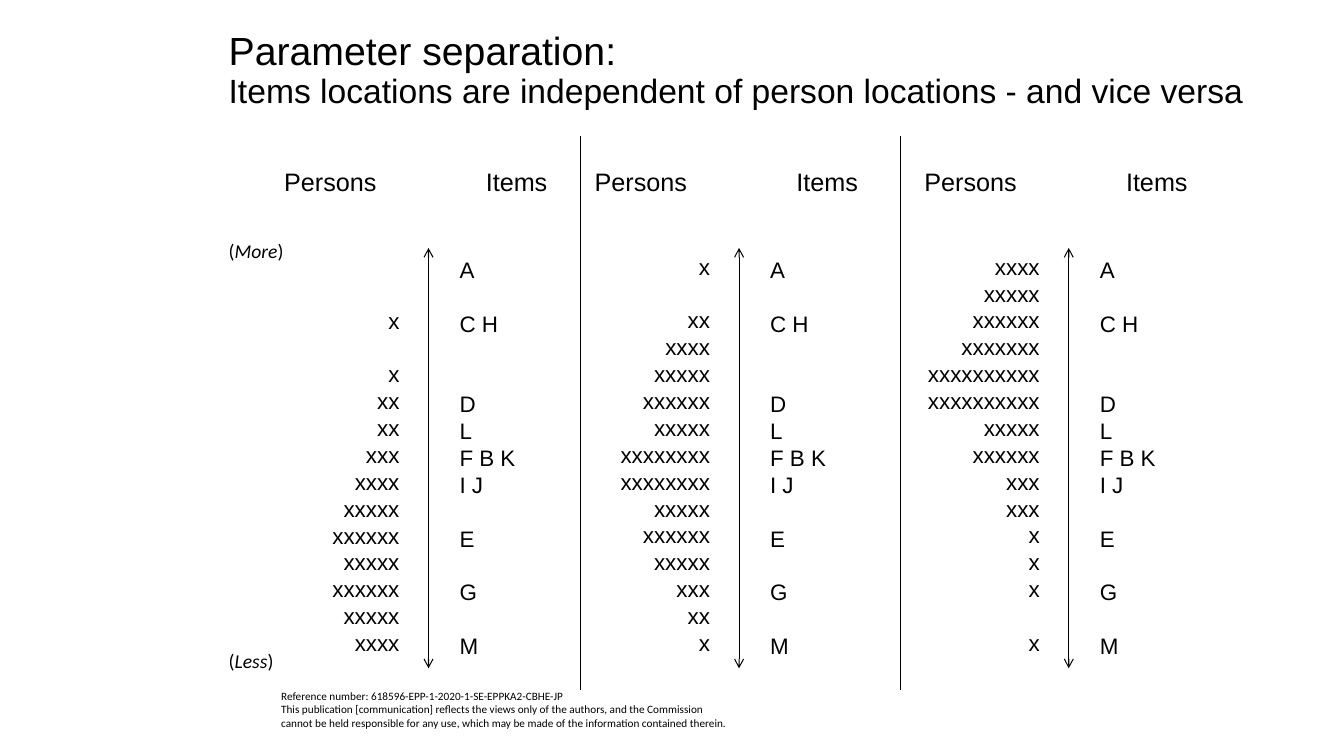
from lxml import etree
from pptx import Presentation
from pptx.dml.color import RGBColor
from pptx.enum.shapes import MSO_CONNECTOR
from pptx.enum.text import MSO_ANCHOR, PP_ALIGN
from pptx.oxml.ns import qn
from pptx.util import Inches, Pt

STRAIGHT = MSO_CONNECTOR.STRAIGHT
LEFT, RIGHT = PP_ALIGN.LEFT, PP_ALIGN.RIGHT
TOP, MIDDLE = MSO_ANCHOR.TOP, MSO_ANCHOR.MIDDLE
BLACK = "000000"
ROW_PT = 19.2
TOP_Y = 2.46

ITEMS = ["A", "", "C H", "", "", "D", "L", "F B K", "I J", "", "E", "", "G", "", "M"]
SCALES = [
    (4.25, [0, 0, 1, 0, 1, 2, 2, 3, 4, 5, 6, 5, 6, 5, 4]),
    (7.33, [1, 0, 2, 4, 5, 6, 5, 8, 8, 5, 6, 5, 3, 2, 1]),
    (10.6, [4, 5, 6, 7, 10, 10, 5, 6, 3, 3, 1, 1, 1, 0, 1]),
]


def color(value):
    return RGBColor.from_string(value)


class SlideBuilder:
    def __init__(self, slide):
        self.slide = slide
        self.font = {"name": "Arial", "size": Pt(16), "italic": False}

    def text_frame(self, x, y, w, h, anchor=TOP):
        sp = self.slide.shapes.add_textbox(Inches(x), Inches(y), Inches(w), Inches(h))
        tf = sp.text_frame
        tf.word_wrap = True
        tf.vertical_anchor = anchor
        return tf

    def run(self, p, text, **style):
        r = p.add_run()
        r.text = text
        for key, value in {**self.font, **style}.items():
            setattr(r.font, key, value)
        r.font.color.rgb = color(BLACK)

    def lines(self, x, y, w, h, runs, anchor=TOP, spacing=1.0):
        p = self.text_frame(x, y, w, h, anchor).paragraphs[0]
        p.line_spacing = spacing
        for i, (text, style) in enumerate(runs):
            if i:
                p.add_line_break()
            self.run(p, text, **style)

    def label(self, x, y, word):
        p = self.text_frame(x, y, 0.9, 0.34).paragraphs[0]
        for text, italic in (("(", False), (word, True), (")", False)):
            self.run(p, text, name="Calibri", size=Pt(14), italic=italic)

    def heading(self, x, y):
        p = self.text_frame(x, y, 2.84, 0.4).paragraphs[0]
        tabs = etree.SubElement(p._p.get_or_add_pPr(), qn("a:tabLst"))
        etree.SubElement(tabs, qn("a:tab"), pos=str(Inches(2)), algn="l")
        self.run(p, "Persons\tItems", size=Pt(18))

    def column(self, x, y, w, rows, align):
        filled = [i for i, text in enumerate(rows) if text]
        first = filled[0]
        pitch = ROW_PT / 72
        tf = self.text_frame(x, y + first * pitch, w, (len(rows) - first) * pitch + 0.1)
        previous = first - 1
        for i in filled:
            p = tf.paragraphs[0] if i == first else tf.add_paragraph()
            p.alignment = align
            p.line_spacing = Pt(ROW_PT)
            p.space_before = Pt(ROW_PT * (i - previous - 1))
            self.run(p, rows[i])
            previous = i

    def line(self, x, y1, y2, arrows=False):
        c = self.slide.shapes.add_connector(
            STRAIGHT, Inches(x), Inches(y1), Inches(x), Inches(y2))
        c.line.color.rgb = color(BLACK)
        c.line.width = Pt(0.75)
        if arrows:
            ln = c.line._get_or_add_ln()
            for end in ("a:headEnd", "a:tailEnd"):
                etree.SubElement(ln, qn(end), type="arrow")
        etree.SubElement(c._element.spPr, qn("a:effectLst"))

    def scale(self, x, counts):
        self.line(x, TOP_Y, 6.63, arrows=True)
        self.heading(x - 1.53, 1.6)
        self.column(x - 1.6, TOP_Y, 1.41, ["x" * n for n in counts], RIGHT)
        self.column(x + 0.21, TOP_Y + 0.03, 1, ITEMS, LEFT)


def main():
    prs = Presentation()
    prs.slide_width, prs.slide_height = Inches(13.33), Inches(7.5)
    s = SlideBuilder(prs.slides.add_slide(prs.slide_layouts[6]))

    small = {"name": "Calibri", "size": Pt(8)}
    s.lines(2.69, 6.79, 4.64, 0.5, [
        ("Reference number: 618596-EPP-1-2020-1-SE-EPPKA2-CBHE-JP", small),
        ("This publication [communication] reflects the views only of the authors, "
         "and the Commission cannot be held responsible for any use, which may be "
         "made of the information contained therein.", small),
    ])
    for x, counts in SCALES:
        s.scale(x, counts)
    s.lines(2.17, 0.08, 10.43, 1.25, [
        ("Parameter separation:", {"size": Pt(28)}),
        ("Items locations are independent of person locations - and vice versa",
         {"size": Pt(24)}),
    ], MIDDLE, 0.9)
    for x in (5.76, 8.93):
        s.line(x, 1.35, 6.85)
    s.label(2.17, 2.32, "More")
    s.label(2.17, 6.39, "Less")
    prs.save("out.pptx")


if __name__ == "__main__":
    main()
